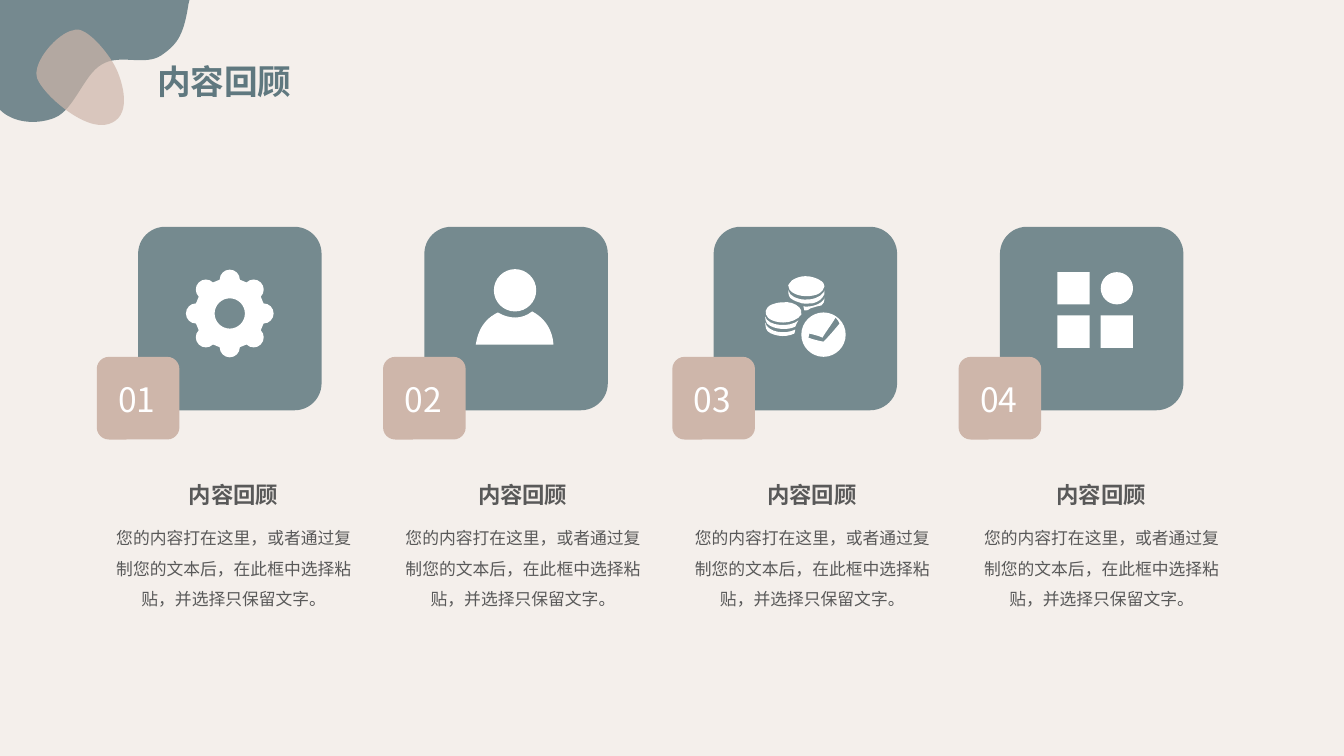
from math import cos, sin, radians

from lxml.etree import SubElement
from pptx import Presentation
from pptx.dml.color import RGBColor
from pptx.enum.shapes import MSO_SHAPE
from pptx.enum.text import MSO_ANCHOR, MSO_AUTO_SIZE, PP_ALIGN
from pptx.oxml.ns import qn
from pptx.util import Inches, Pt

COLORS = {
    "background": "F4EFEB", "tile": "758A8F", "badge": "CEB6AA",
    "title": "5F787F", "text": "595959", "white": "FFFFFF",
}
HEADING = "内容回顾"
CAPTION = "您的内容打在这里，或者通过复制您的文本后，在此框中选择粘贴，并选择只保留文字。"
TILE_LEFTS = [1.37, 4.21, 7.08, 9.92]
TEXT_LEFT, TEXT_STEP = 1.09, 2.87

CORNER_BLOB = [
    (0, 1.08), (0, 0), (1.88, 0), (1.87, 0.04),
    (1.82, 0.38, 1.74, 0.45, 1.6, 0.55), (1.43, 0.66, 1.19, 0.53, 1.01, 0.64),
    (0.83, 0.74, 0.74, 1.09, 0.54, 1.17), (0.36, 1.24, 0.13, 1.22, 0, 1.09),
]
PEBBLE = [
    (0.73, 0.3), (0.85, 0.24, 1.11, 0.56, 1.17, 0.72), (1.23, 0.87, 1.3, 1.16, 1.08, 1.23),
    (0.85, 1.31, 0.43, 0.94, 0.37, 0.78), (0.31, 0.62, 0.58, 0.32, 0.73, 0.3),
]
SHOULDERS = [
    (4.72, 3.42), (4.73, 3.37, 4.75, 3.19, 4.94, 3.1), (4.99, 3.13, 5.05, 3.15, 5.11, 3.15),
    (5.17, 3.15, 5.23, 3.13, 5.28, 3.09), (5.47, 3.19, 5.49, 3.37, 5.49, 3.42),
]
COINS = [
    [(7.86, 2.9), (7.93, 2.95, 8.06, 2.95, 8.13, 2.91), (8.15, 2.89, 8.18, 2.87, 8.18, 2.84),
     (8.18, 2.81, 8.16, 2.8, 8.15, 2.79), (8.11, 2.76, 8.05, 2.74, 7.99, 2.74),
     (7.94, 2.74, 7.89, 2.76, 7.86, 2.78), (7.85, 2.79, 7.83, 2.81, 7.82, 2.83),
     (7.82, 2.86, 7.84, 2.89, 7.86, 2.9)],
    [(7.86, 2.97), (7.87, 2.98, 7.88, 2.98, 7.9, 2.99), (7.91, 2.99, 7.92, 3, 7.93, 3),
     (7.96, 3.02, 8.02, 3.01, 8.06, 3.01), (8.1, 3, 8.14, 2.98, 8.16, 2.95),
     (8.18, 2.94, 8.18, 2.91, 8.18, 2.88), (8.18, 2.89, 8.17, 2.9, 8.17, 2.9),
     (8.11, 3, 7.85, 3, 7.82, 2.88), (7.82, 2.92, 7.83, 2.96, 7.86, 2.97)],
    [(7.97, 3.04), (7.97, 3.05, 7.98, 3.06, 7.98, 3.08), (8.01, 3.09, 8.02, 3.07, 8.04, 3.06),
     (8.07, 3.05, 8.1, 3.04, 8.15, 3.03), (8.17, 3.02, 8.18, 2.99, 8.18, 2.95),
     (8.18, 2.95, 8.18, 2.96, 8.18, 2.96), (8.15, 3.02, 8.05, 3.05, 7.97, 3.04)],
    [(7.93, 3.05), (7.89, 3.01, 7.83, 2.99, 7.76, 3), (7.72, 3, 7.69, 3.01, 7.66, 3.02),
     (7.63, 3.03, 7.58, 3.07, 7.6, 3.12), (7.61, 3.17, 7.7, 3.2, 7.77, 3.2),
     (7.84, 3.2, 7.92, 3.17, 7.95, 3.12), (7.96, 3.09, 7.94, 3.06, 7.93, 3.05)],
    [(7.92, 3.18), (7.84, 3.25, 7.62, 3.24, 7.59, 3.14), (7.59, 3.17, 7.6, 3.19, 7.61, 3.21),
     (7.67, 3.27, 7.82, 3.28, 7.89, 3.24), (7.9, 3.22, 7.91, 3.19, 7.92, 3.18)],
    [(7.59, 3.2), (7.6, 3.22, 7.59, 3.24, 7.6, 3.26), (7.61, 3.3, 7.67, 3.32, 7.72, 3.33),
     (7.77, 3.34, 7.84, 3.33, 7.88, 3.31), (7.88, 3.3, 7.89, 3.29, 7.89, 3.27),
     (7.79, 3.32, 7.62, 3.3, 7.59, 3.2)],
]
CHECK_MARK = [
    (8.17, 3.39), (8.12, 3.38, 8.07, 3.37, 8.02, 3.35), (8.02, 3.34, 8.03, 3.33, 8.03, 3.31),
    (8.07, 3.32, 8.12, 3.33, 8.16, 3.35), (8.2, 3.28, 8.25, 3.22, 8.29, 3.15),
    (8.31, 3.17, 8.32, 3.19, 8.33, 3.21), (8.28, 3.27, 8.23, 3.33, 8.17, 3.39),
]


def arc(x, y, radius, start=0, quarters=4):
    """Return a start point and one cubic segment for each quarter turn."""
    handle = 0.55 * radius
    angle = radians(start)
    segments = [(x + radius * cos(angle), y + radius * sin(angle))]
    for quarter in range(quarters):
        angle = radians(start + 90 * quarter)
        across, down = cos(angle), sin(angle)
        segments.append((
            x + radius * across - handle * down, y + radius * down + handle * across,
            x - radius * down + handle * across, y + radius * across + handle * down,
            x - radius * down, y + radius * across))
    return segments


def square(x, y, side):
    """Return the corners of a square."""
    return [(x, y), (x + side, y), (x + side, y + side), (x, y + side)]


def gear(x, y, teeth=8, reach=0.335, tooth_radius=0.1):
    """Return the outline of a gear with round teeth."""
    segments = []
    for turn in range(0, 360, 360 // teeth):
        angle = radians(turn)
        segments += arc(x + reach * cos(angle), y + reach * sin(angle),
                        tooth_radius, turn - 90, 2)
    return segments


class SlideBuilder:
    """Hold the style and the current slide."""

    font = "Noto Sans CJK SC"

    def __init__(self, slide):
        """Set the slide and its background."""
        self.slide = slide
        fill = slide.background.fill
        fill.solid()
        fill.fore_color.rgb = RGBColor.from_string(COLORS["background"])

    def paint(self, shape, color, opacity=100):
        """Give a shape a plain fill without line or shadow."""
        shape.shadow.inherit = False
        shape.line.fill.background()
        shape.fill.solid()
        shape.fill.fore_color.rgb = RGBColor.from_string(COLORS[color])
        if opacity < 100:
            color_element = shape._element.spPr.find(qn("a:solidFill"))[0]
            SubElement(color_element, qn("a:alpha")).set("val", str(opacity * 1000))

    def rounded_square(self, left, top, side, color):
        """Add a square with rounded corners."""
        shape = self.slide.shapes.add_shape(
            MSO_SHAPE.ROUNDED_RECTANGLE, Inches(left), Inches(top), Inches(side), Inches(side))
        shape.adjustments[0] = 0.147
        self.paint(shape, color)

    def outline(self, contours, color="white", opacity=100):
        """Add one freeform made of closed contours with lines and cubic curves."""
        builder = None
        for contour in contours:
            points = [(Inches(segment[i]), Inches(segment[i + 1]))
                      for segment in contour for i in range(0, len(segment), 2)]
            if builder is None:
                builder = self.slide.shapes.build_freeform(*points[0])
            else:
                builder.move_to(*points[0])
            builder.add_line_segments(points[1:], close=True)
        shape = builder.convert_to_shape()
        self.bend(shape, [segment for contour in contours for segment in contour[1:]])
        self.paint(shape, color, opacity)

    def bend(self, shape, segments):
        """Join each three lines of a cubic segment into one curve."""
        outline = next(shape._element.iter(qn("a:path")))
        lines = iter(outline.findall(qn("a:lnTo")))
        for segment in segments:
            curve = next(lines)
            if len(segment) == 6:
                curve.tag = qn("a:cubicBezTo")
                for line in (next(lines), next(lines)):
                    curve.append(line[0])
                    outline.remove(line)

    def text(self, box, words, size, color, bold=False, align=PP_ALIGN.CENTER,
             spacing=None, anchor=MSO_ANCHOR.TOP, margin=0, wrap=True, grow=True):
        """Add a text box holding one run."""
        shape = self.slide.shapes.add_textbox(*[Inches(length) for length in box])
        frame = shape.text_frame
        frame.word_wrap = wrap
        frame.auto_size = MSO_AUTO_SIZE.SHAPE_TO_FIT_TEXT if grow else MSO_AUTO_SIZE.NONE
        frame.vertical_anchor = anchor
        frame.margin_left = frame.margin_right = Inches(margin)
        frame.margin_top = frame.margin_bottom = Inches(margin / 2)
        paragraph = frame.paragraphs[0]
        paragraph.alignment = align
        if spacing:
            paragraph.line_spacing = spacing
        run = paragraph.add_run()
        run.text = words
        run.font.size = Pt(size)
        run.font.bold = bold
        run.font.color.rgb = RGBColor.from_string(COLORS[color])
        run.font.name = self.font
        SubElement(run._r.get_or_add_rPr(), qn("a:ea")).set("typeface", self.font)


def main():
    """Build the slide and save it."""
    presentation = Presentation()
    presentation.slide_width, presentation.slide_height = Inches(40 / 3), Inches(7.5)
    builder = SlideBuilder(presentation.slides.add_slide(presentation.slide_layouts[6]))
    for index, left in enumerate(TILE_LEFTS):
        builder.rounded_square(left, 2.25, 1.82, "tile")
        builder.rounded_square(left - 0.41, 3.54, 0.82, "badge")
        builder.text((left - 0.29, 3.74, 0.56, 0.43), f"{index + 1:02}", 24, "white",
                     anchor=MSO_ANCHOR.MIDDLE, grow=False)
        text_left = TEXT_LEFT + index * TEXT_STEP
        builder.text((text_left + 0.68, 4.77, 1.09, 0.27), HEADING, 16, "text", bold=True)
        builder.text((text_left, 5.14, 2.46, 0.91), CAPTION, 12, "text", spacing=1.5)
    builder.outline([gear(2.28, 3.11), arc(2.28, 3.11, 0.15)])
    squares = [square(x, y, 0.32) for x, y in [(10.49, 2.7), (10.49, 3.13), (10.92, 3.13)]]
    builder.outline(squares + [arc(11.08, 2.86, 0.16)])
    builder.outline(COINS + [arc(8.17, 3.32, 0.22), CHECK_MARK])
    builder.outline([arc(5.11, 2.88, 0.21), SHOULDERS])
    builder.outline([CORNER_BLOB], "title", 85)
    builder.outline([PEBBLE], "badge", 70)
    builder.text((1.46, 0.56, 1.55, 0.5), HEADING, 24, "title", bold=True,
                 align=PP_ALIGN.LEFT, margin=0.1, wrap=False)
    presentation.save("out.pptx")


if __name__ == "__main__":
    main()
